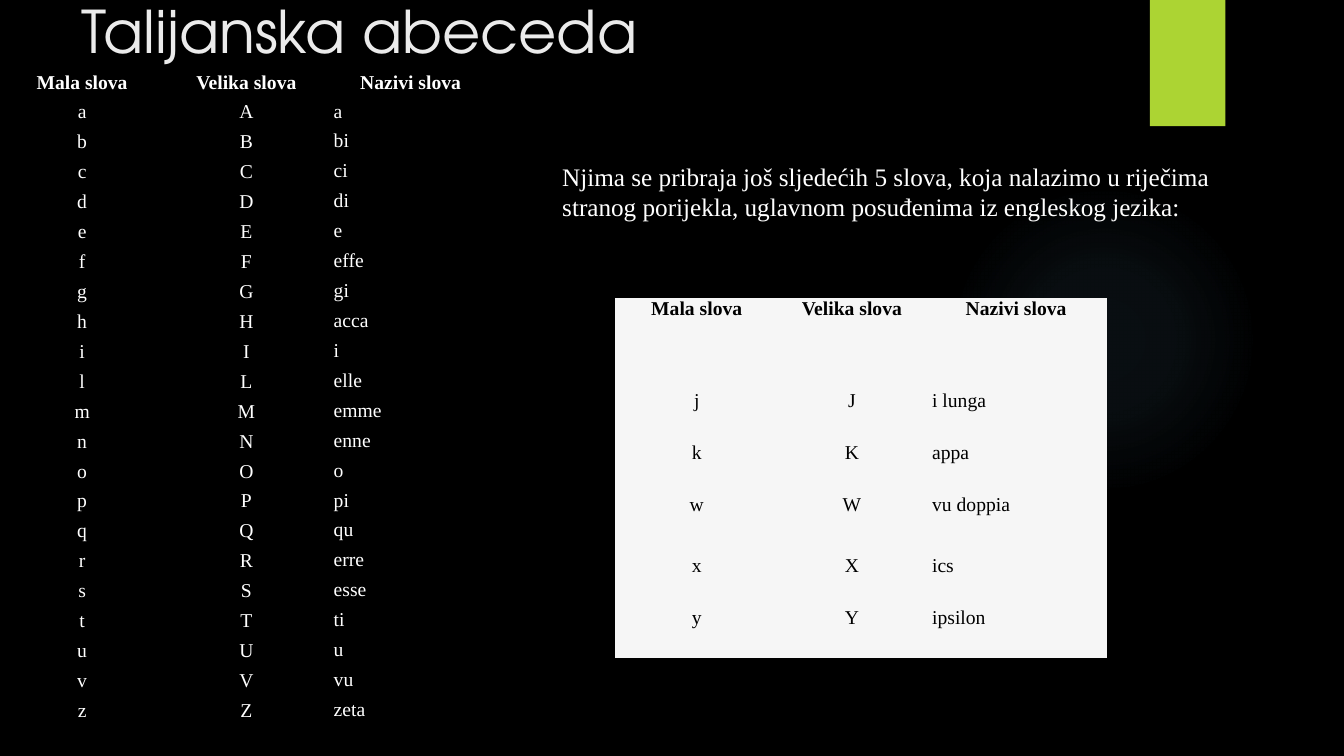
"""Build the slide that lists the letters of the Italian alphabet."""
from lxml.etree import SubElement
from pptx import Presentation
from pptx.dml.color import RGBColor
from pptx.enum.shapes import MSO_SHAPE
from pptx.enum.text import MSO_ANCHOR, PP_ALIGN
from pptx.oxml.ns import qn
from pptx.util import Cm, Pt

COLORS = {
    "background": "000000",
    "glow": "7AC4F0",
    "accent": "ACD433",
    "title": "EBEBEB",
    "light": "FFFFFF",
    "dark": "000000",
    "panel": "F6F6F6",
}
TITLE_FONT = "TeX Gyre Adventor"
BODY_FONT = "Times New Roman"
PLAIN_TABLE_STYLE = "{2D5ABB26-0587-4C30-8999-92F81FD0307C}"
HEADINGS = ("Mala slova", "Velika slova", "Nazivi slova")
ITALIAN_NAMES = ("a bi ci di e effe gi acca i elle emme enne o pi qu erre "
                 "esse ti u vu zeta").split()
FOREIGN_NAMES = ["i lunga", "appa", "vu doppia", "ics", "ipsilon"]


def color(name):
    return RGBColor.from_string(COLORS[name])


def write(frame, text, font=BODY_FONT, size=14, ink="light", bold=False,
          align=PP_ALIGN.LEFT, space_after=0):
    frame.word_wrap = True
    paragraph = frame.paragraphs[0]
    paragraph.alignment = align
    paragraph.space_after = Pt(space_after)
    run = paragraph.add_run()
    run.text = text
    run.font.name = font
    run.font.size = Pt(size)
    run.font.bold = bold
    run.font.color.rgb = color(ink)


def alphabet_rows(letters, names):
    return [HEADINGS] + [(letter, letter.upper(), name)
                         for letter, name in zip(letters, names)]


class AlphabetSlide:
    def __init__(self, presentation):
        self.slide = presentation.slides.add_slide(presentation.slide_layouts[6])
        fill = self.slide.background.fill
        fill.solid()
        fill.fore_color.rgb = color("background")

    def block(self, kind, left, top, width, height, fill):
        shape = self.slide.shapes.add_shape(
            kind, Cm(left), Cm(top), Cm(width), Cm(height))
        shape.shadow.inherit = False
        shape.line.fill.background()
        shape.fill.solid()
        shape.fill.fore_color.rgb = color(fill)
        return shape

    def glow(self, left, top, diameter, stops):
        shape = self.block(MSO_SHAPE.OVAL, left, top, diameter, diameter, "glow")
        solid = shape.element.spPr.find(qn("a:solidFill"))
        gradient = solid.makeelement(qn("a:gradFill"), {"rotWithShape": "1"})
        stop_list = SubElement(gradient, qn("a:gsLst"))
        for position, opacity in stops:
            stop = SubElement(stop_list, qn("a:gs"), pos=str(position * 1000))
            tint = SubElement(stop, qn("a:srgbClr"), val=COLORS["glow"])
            SubElement(tint, qn("a:alpha"), val=str(opacity * 1000))
        circle = SubElement(gradient, qn("a:path"), {"path": "circle"})
        SubElement(circle, qn("a:fillToRect"), dict.fromkeys("ltrb", "50000"))
        shape.element.spPr.replace(solid, gradient)

    def text(self, left, top, width, height, text, **style):
        box = self.slide.shapes.add_textbox(
            Cm(left), Cm(top), Cm(width), Cm(height))
        write(box.text_frame, text, **style)

    def table(self, left, top, widths, heights, rows, margins, ink,
              fill=None, anchor=MSO_ANCHOR.TOP):
        frame = self.slide.shapes.add_table(
            len(rows), len(widths), Cm(left), Cm(top),
            Cm(sum(widths)), Cm(sum(heights)))
        frame.element.find(".//" + qn("a:tableStyleId")).text = PLAIN_TABLE_STYLE
        table = frame.table
        table.first_row = table.horz_banding = False
        for column, width in zip(table.columns, widths):
            column.width = Cm(width)
        for row, height in zip(table.rows, heights):
            row.height = Cm(height)
        for row_index, row in enumerate(rows):
            for column_index, text in enumerate(row):
                cell = table.cell(row_index, column_index)
                is_heading = row_index == 0
                is_name = column_index == 2 and not is_heading
                cell.margin_left = cell.margin_right = Cm(margins[0])
                cell.margin_top = cell.margin_bottom = Cm(margins[1])
                cell.vertical_anchor = MSO_ANCHOR.TOP if is_name else anchor
                if fill:
                    cell.fill.solid()
                    cell.fill.fore_color.rgb = color(fill)
                else:
                    cell.fill.background()
                write(cell.text_frame, text, ink=ink, bold=is_heading,
                      align=PP_ALIGN.JUSTIFY if is_name else PP_ALIGN.CENTER,
                      space_after=6)


def main():
    presentation = Presentation()
    presentation.slide_width = Cm(33.87)
    presentation.slide_height = Cm(19.05)
    page = AlphabetSlide(presentation)
    page.glow(23.9, 4.65, 7.82, [(0, 7), (36, 6), (69, 0)])
    page.block(MSO_SHAPE.RECTANGLE, 28.98, 0, 1.9, 3.18, "accent")
    page.text(1.8, -0.25, 26.14, 3.89, "Talijanska abeceda",
              font=TITLE_FONT, size=42, ink="title")
    italian = alphabet_rows("abcdefghilmnopqrstuvz", ITALIAN_NAMES)
    page.table(0, 1.7, [4.14] * 3, [0.72] * len(italian), italian,
               margins=(0.13, 0.08), ink="light", anchor=MSO_ANCHOR.MIDDLE)
    page.text(13.92, 3.94, 16.94, 1.8,
              "Njima se pribraja još sljedećih 5 slova, koja nalazimo u riječima "
              "stranog porijekla, uglavnom posuđenima iz engleskog jezika:",
              size=18)
    page.table(15.49, 7.5, [4.14, 3.68, 4.6], [2.34, 1.3, 1.3, 1.55, 1.3, 1.3],
               alphabet_rows("jkwxy", FOREIGN_NAMES),
               margins=(0.18, 0), ink="dark", fill="panel")
    presentation.save("out.pptx")


if __name__ == "__main__":
    main()
